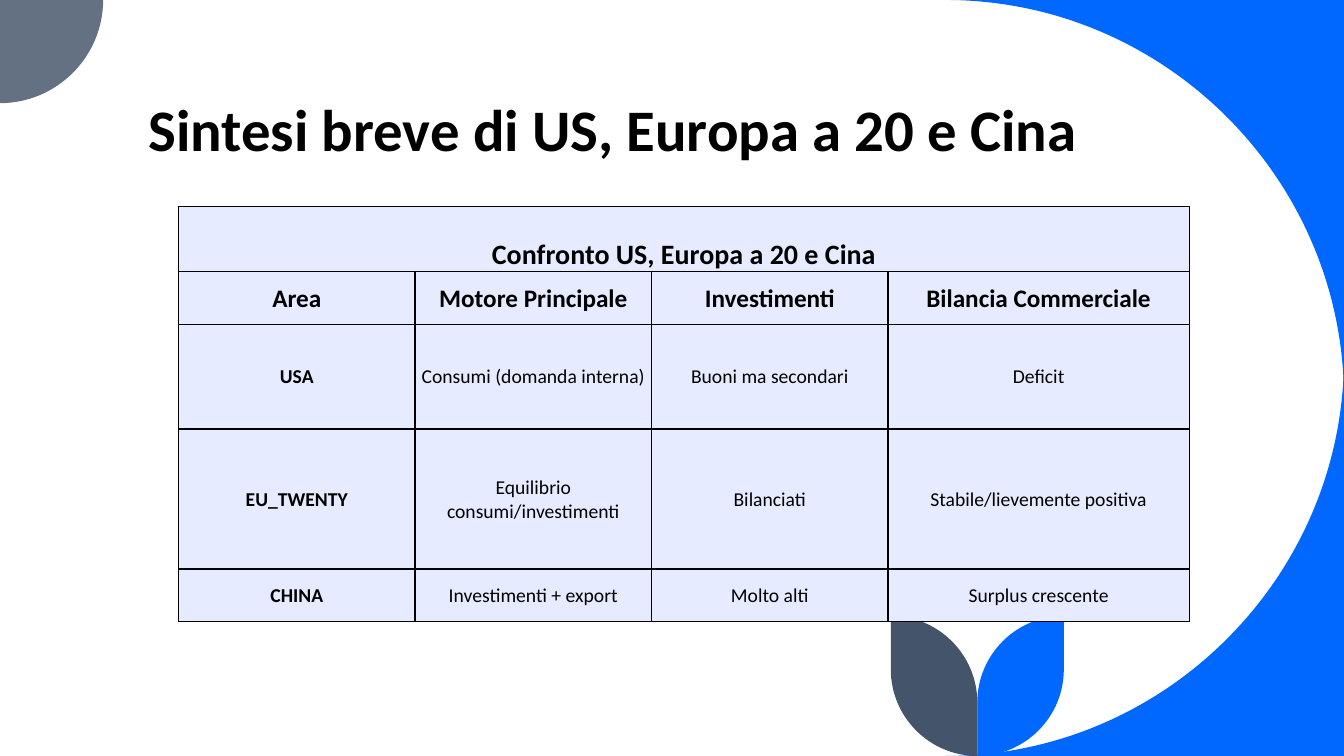
from lxml.etree import SubElement
from pptx import Presentation
from pptx.dml.color import RGBColor
from pptx.enum.text import MSO_ANCHOR, PP_ALIGN
from pptx.oxml.ns import qn
from pptx.util import Cm, Pt

WIDTH, HEIGHT = 33.87, 19.05
BLUE, SLATE, GREY = "0068FF", "44546A", "637183"
BLACK, LAVENDER = "000000", "E7EBFF"
RIGHT, DOWN, LEFT, UP = (1, 0), (0, 1), (-1, 0), (0, -1)

COLUMN_WIDTHS = [5.96, 5.96, 5.96, 7.59]
ROW_HEIGHTS = [1.64, 1.32, 2.64, 3.53, 1.33]
COMPARISON = [
    ["Confronto US, Europa a 20 e Cina"],
    ["Area", "Motore Principale", "Investimenti", "Bilancia Commerciale"],
    ["USA", "Consumi (domanda interna)", "Buoni ma secondari", "Deficit"],
    ["EU_TWENTY", "Equilibrio consumi/investimenti", "Bilanciati",
     "Stabile/lievemente positiva"],
    ["CHINA", "Investimenti + export", "Molto alti", "Surplus crescente"],
]


def rgb(colour):
    return RGBColor.from_string(colour)


def set_fill(target, colour):
    target.fill.solid()
    target.fill.fore_color.rgb = rgb(colour)


def set_attributes(target, values):
    for name, value in values.items():
        setattr(target, name, value)


def quarter_arc(centre_x, centre_y, radius, start):
    """Start, two control points and end, in cm, of a clockwise quarter circle."""
    x, y = start
    end_x, end_y = -y, x
    bulge = 0.55
    directions = [(x, y), (x + bulge * end_x, y + bulge * end_y),
                  (end_x + bulge * x, end_y + bulge * y), (end_x, end_y)]
    return [(centre_x + radius * dx, centre_y + radius * dy) for dx, dy in directions]


def bend_lines(outline, arc_count):
    """Turn the three lines after each arc's start into one cubic curve."""
    lines = list(outline._element.iter(qn("a:lnTo")))
    for arc in range(arc_count):
        controls = lines[4 * arc:4 * arc + 3]
        curve = controls[0].makeelement(qn("a:cubicBezTo"))
        controls[0].addprevious(curve)
        for line in controls:
            curve.append(line[0])
            line.getparent().remove(line)


def add_outline(slide, arcs, colour, corners=()):
    points = [(Cm(x), Cm(y)) for x, y in sum(arcs, []) + list(corners)]
    builder = slide.shapes.build_freeform(*points[0])
    builder.add_line_segments(points[1:], close=True)
    outline = builder.convert_to_shape()
    bend_lines(outline, len(arcs))
    outline.shadow.inherit = False
    outline.line.fill.background()
    set_fill(outline, colour)


def add_decorations(slide):
    bend = 10.04
    bend_x = WIDTH - bend
    add_outline(slide, [quarter_arc(bend_x, bend, bend, UP)], BLUE, [(WIDTH, 0)])
    add_outline(slide, [quarter_arc(bend_x, HEIGHT - bend, bend, RIGHT)], BLUE,
                [(WIDTH, HEIGHT)])
    add_outline(slide, [quarter_arc(0, 0, 2.6, RIGHT)], GREY, [(0, 0)])

    stem, leaf, leaf_height = 24.63, 2.18, 3.53
    right_leaf = [quarter_arc(stem, HEIGHT - leaf, leaf, RIGHT),
                  quarter_arc(stem + leaf, HEIGHT - leaf_height + leaf, leaf, LEFT)]
    left_leaf = [[(2 * stem - x, y) for x, y in arc] for arc in right_leaf]
    add_outline(slide, right_leaf, BLUE)
    add_outline(slide, left_leaf, SLATE)


def write_text(paragraph, text, size, bold):
    run = paragraph.add_run()
    run.text = text
    set_attributes(run.font, {"name": "Calibri", "size": Pt(size), "bold": bold})
    run.font.color.rgb = rgb(BLACK)


def add_title(slide, text):
    title = slide.shapes.add_textbox(Cm(3.49), Cm(1.73), Cm(28.47), Cm(2.49))
    frame = title.text_frame
    set_attributes(frame, {"word_wrap": True, "vertical_anchor": MSO_ANCHOR.BOTTOM})
    frame.paragraphs[0].line_spacing = 0.8
    write_text(frame.paragraphs[0], text, 42, True)


def add_borders(cell):
    properties = cell._tc.get_or_add_tcPr()
    for side in ("lnL", "lnR", "lnT", "lnB"):
        border = SubElement(properties, qn(f"a:{side}"), w=str(Pt(1)))
        SubElement(SubElement(border, qn("a:solidFill")), qn("a:srgbClr"), val=BLACK)


def format_cell(cell, anchor):
    add_borders(cell)
    set_fill(cell, LAVENDER)
    set_attributes(cell, {
        "margin_left": Cm(0.03), "margin_right": Cm(0.03),
        "margin_top": Cm(0.03), "margin_bottom": 0,
        "vertical_anchor": anchor,
    })


def add_comparison(slide):
    table = slide.shapes.add_table(
        len(ROW_HEIGHTS), len(COLUMN_WIDTHS), Cm(4.5), Cm(5.21),
        Cm(sum(COLUMN_WIDTHS)), Cm(sum(ROW_HEIGHTS))).table
    set_attributes(table, {"first_row": False, "horz_banding": False})
    for column, width in zip(table.columns, COLUMN_WIDTHS):
        column.width = Cm(width)
    for row, height in zip(table.rows, ROW_HEIGHTS):
        row.height = Cm(height)
    table.cell(0, 0).merge(table.cell(0, len(COLUMN_WIDTHS) - 1))

    for r, row in enumerate(table.rows):
        for cell in row.cells:
            format_cell(cell, MSO_ANCHOR.MIDDLE if r else MSO_ANCHOR.BOTTOM)
        size = {0: 20, 1: 18}.get(r, 14)
        for c, text in enumerate(COMPARISON[r]):
            paragraph = table.cell(r, c).text_frame.paragraphs[0]
            paragraph.alignment = PP_ALIGN.CENTER
            write_text(paragraph, text, size, r < 2 or c == 0)


def main():
    deck = Presentation()
    set_attributes(deck, {"slide_width": Cm(WIDTH), "slide_height": Cm(HEIGHT)})
    slide = deck.slides.add_slide(deck.slide_layouts[6])
    add_decorations(slide)
    add_title(slide, "Sintesi breve di US, Europa a 20 e Cina")
    add_comparison(slide)
    deck.save("out.pptx")


if __name__ == "__main__":
    main()
